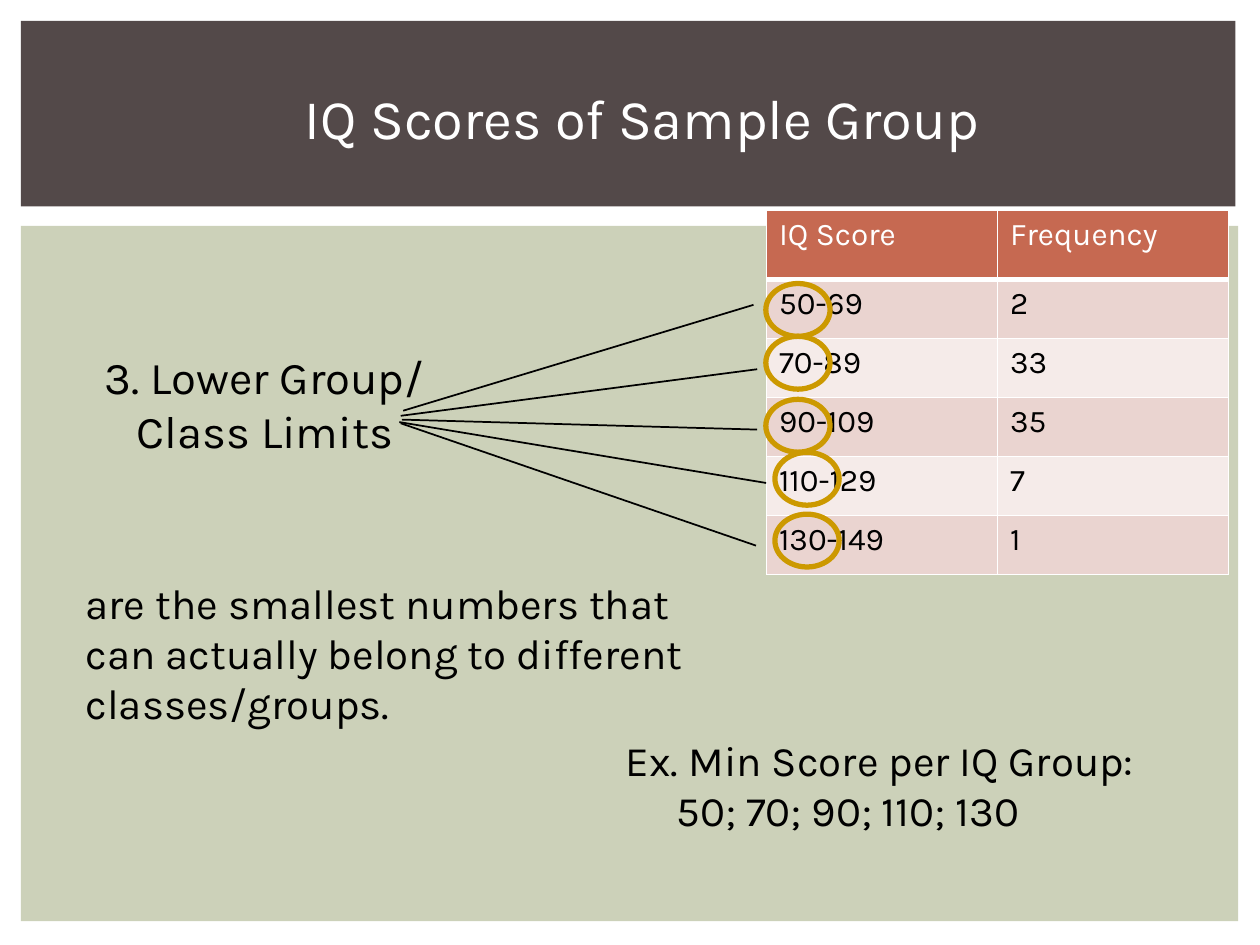
from dataclasses import dataclass

from lxml import etree
from pptx import Presentation
from pptx.dml.color import RGBColor
from pptx.enum.shapes import MSO_CONNECTOR, MSO_SHAPE
from pptx.enum.text import MSO_ANCHOR, PP_ALIGN
from pptx.oxml.ns import qn
from pptx.util import Pt

RECTANGLE, OVAL = MSO_SHAPE.RECTANGLE, MSO_SHAPE.OVAL
STRAIGHT = MSO_CONNECTOR.STRAIGHT
TOP, MIDDLE = MSO_ANCHOR.TOP, MSO_ANCHOR.MIDDLE
LEFT, CENTER = PP_ALIGN.LEFT, PP_ALIGN.CENTER


@dataclass(frozen=True)
class Theme:
    font: str = "Karla"
    title_size: float = 32
    term_size: float = 26
    body_size: float = 24
    table_size: float = 18
    white: str = "FFFFFF"
    black: str = "000000"
    title_band: str = "534949"
    panel: str = "CCD1B9"
    table_header: str = "C66951"
    table_bands: tuple = ("EAD4D0", "F5EBE9")
    ring: str = "CC9900"


THEME = Theme()

ROWS = [
    ("IQ Score", "Frequency"),
    ("50-69", "2"),
    ("70-89", "33"),
    ("90-109", "35"),
    ("110-129", "7"),
    ("130-149", "1"),
]
RING_SIZE = (36.7, 30.2)
RING_CORNERS = [(437.6, 162), (437.6, 192.2), (437.6, 228.2), (442.8, 258.5), (442.8, 293.8)]
# Start and end of the line to each lower limit
POINTERS = [
    ((230.4, 234.7), (430.6, 174.2)),
    ((229, 237.6), (432.7, 211)),
    ((229.7, 239.8), (432.7, 245.5)),
    ((228.2, 241.2), (437.8, 276)),
    ((229, 241.9), (432, 311.8)),
]


def color(value):
    return RGBColor.from_string(value)


def style_paragraph(paragraph, size, text_color):
    font = paragraph.font
    font.name, font.size, font.bold = THEME.font, Pt(size), False
    font.color.rgb = color(text_color)


def add_panel(slide, left, top, width, height, fill):
    shape = slide.shapes.add_shape(RECTANGLE, Pt(left), Pt(top), Pt(width), Pt(height))
    shape.shadow.inherit = False
    shape.fill.solid()
    shape.fill.fore_color.rgb = color(fill)
    shape.line.fill.background()


def add_text(slide, left, top, width, height, lines, size,
             text_color=THEME.black, alignment=LEFT, anchor=TOP):
    """Each line is a pair: text and left indent."""
    box = slide.shapes.add_textbox(Pt(left), Pt(top), Pt(width), Pt(height))
    frame = box.text_frame
    frame.word_wrap = True
    frame.vertical_anchor = anchor
    for index, (text, indent) in enumerate(lines):
        paragraph = frame.add_paragraph() if index else frame.paragraphs[0]
        paragraph.text = text
        paragraph.alignment = alignment
        style_paragraph(paragraph, size, text_color)
        if indent:
            paragraph._p.get_or_add_pPr().set("marL", str(Pt(indent)))


def set_borders(cell, bottom_width):
    properties = cell._tc.get_or_add_tcPr()
    widths = {"a:lnL": 1, "a:lnR": 1, "a:lnT": 1, "a:lnB": bottom_width}
    for position, (tag, width) in enumerate(widths.items()):
        line = etree.Element(qn(tag), w=str(Pt(width)))
        fill = etree.SubElement(line, qn("a:solidFill"))
        etree.SubElement(fill, qn("a:srgbClr"), val=THEME.white)
        properties.insert(position, line)


def add_score_table(slide, left, top, column_width, header_height, row_height):
    height = header_height + row_height * (len(ROWS) - 1)
    frame = slide.shapes.add_table(len(ROWS), 2, Pt(left), Pt(top),
                                   Pt(column_width * 2), Pt(height))
    table = frame.table
    for column in table.columns:
        column.width = Pt(column_width)
    for row_index, values in enumerate(ROWS):
        is_header = row_index == 0
        table.rows[row_index].height = Pt(header_height if is_header else row_height)
        fill = THEME.table_header if is_header else THEME.table_bands[(row_index - 1) % 2]
        for column_index, value in enumerate(values):
            cell = table.cell(row_index, column_index)
            cell.text = value
            cell.fill.solid()
            cell.fill.fore_color.rgb = color(fill)
            style_paragraph(cell.text_frame.paragraphs[0], THEME.table_size,
                            THEME.white if is_header else THEME.black)
            set_borders(cell, 3 if is_header else 1)


def add_ring(slide, left, top):
    width, height = RING_SIZE
    ring = slide.shapes.add_shape(OVAL, Pt(left), Pt(top), Pt(width), Pt(height))
    ring.shadow.inherit = False
    ring.fill.background()
    ring.line.color.rgb = color(THEME.ring)
    ring.line.width = Pt(3)


def add_pointer(slide, start, end):
    points = [Pt(value) for value in (*start, *end)]
    connector = slide.shapes.add_connector(STRAIGHT, *points)
    connector.line.color.rgb = color(THEME.black)
    connector.line.width = Pt(1)
    etree.SubElement(connector._element.spPr, qn("a:effectLst"))


def main():
    presentation = Presentation()
    presentation.slide_width, presentation.slide_height = Pt(720), Pt(540)
    slide = presentation.slides.add_slide(presentation.slide_layouts[6])

    # Background panel and title band
    add_panel(slide, 12, 129, 695.5, 397.4, THEME.panel)
    add_panel(slide, 12, 12, 694, 106, THEME.title_band)

    # Frequency table
    add_score_table(slide, 438, 120.2, 132, 39.6, 33.7)

    # Title and term
    add_text(slide, 28.8, 16.6, 676.8, 100.8, [("IQ Scores of Sample Group", 0)],
             THEME.title_size, THEME.white, CENTER, MIDDLE)
    add_text(slide, 52.6, 195.8, 239.8, 103.7,
             [("3. Lower Group/", 0), ("Class Limits", 18.5)], THEME.term_size)

    # Lines to the ringed lower limits
    for start, end in POINTERS:
        add_pointer(slide, start, end)
    for left, top in RING_CORNERS:
        add_ring(slide, left, top)

    # Definition and example
    add_text(slide, 41.8, 326.2, 390.2, 94.3,
             [("are the smallest numbers that can actually belong to different "
               "classes/groups.", 0)], THEME.body_size)
    add_text(slide, 350.6, 416, 339.1, 87,
             [("Ex. Min Score per IQ Group:", 0), ("50; 70; 90; 110; 130", 29)],
             THEME.body_size)

    presentation.save("out.pptx")


if __name__ == "__main__":
    main()
